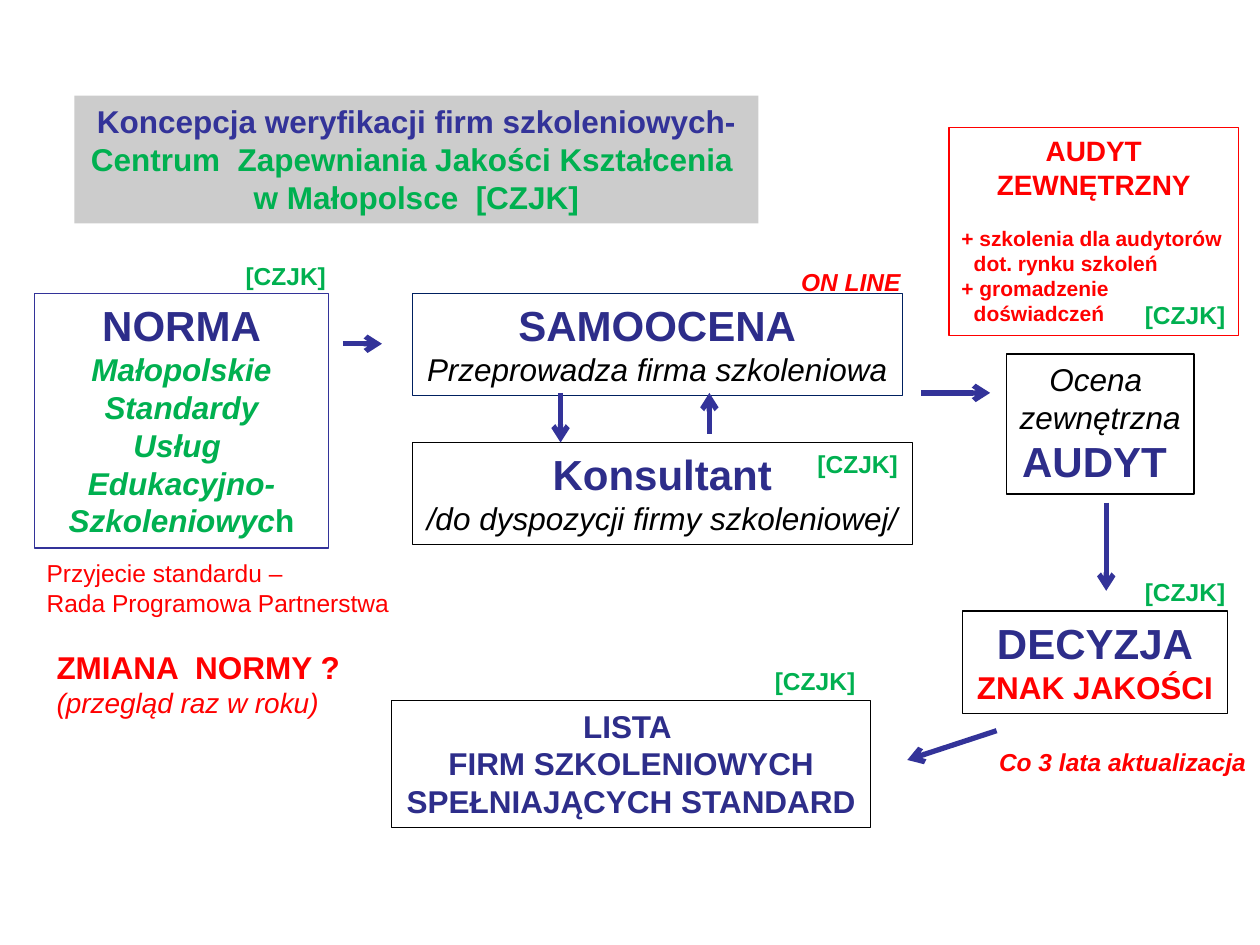
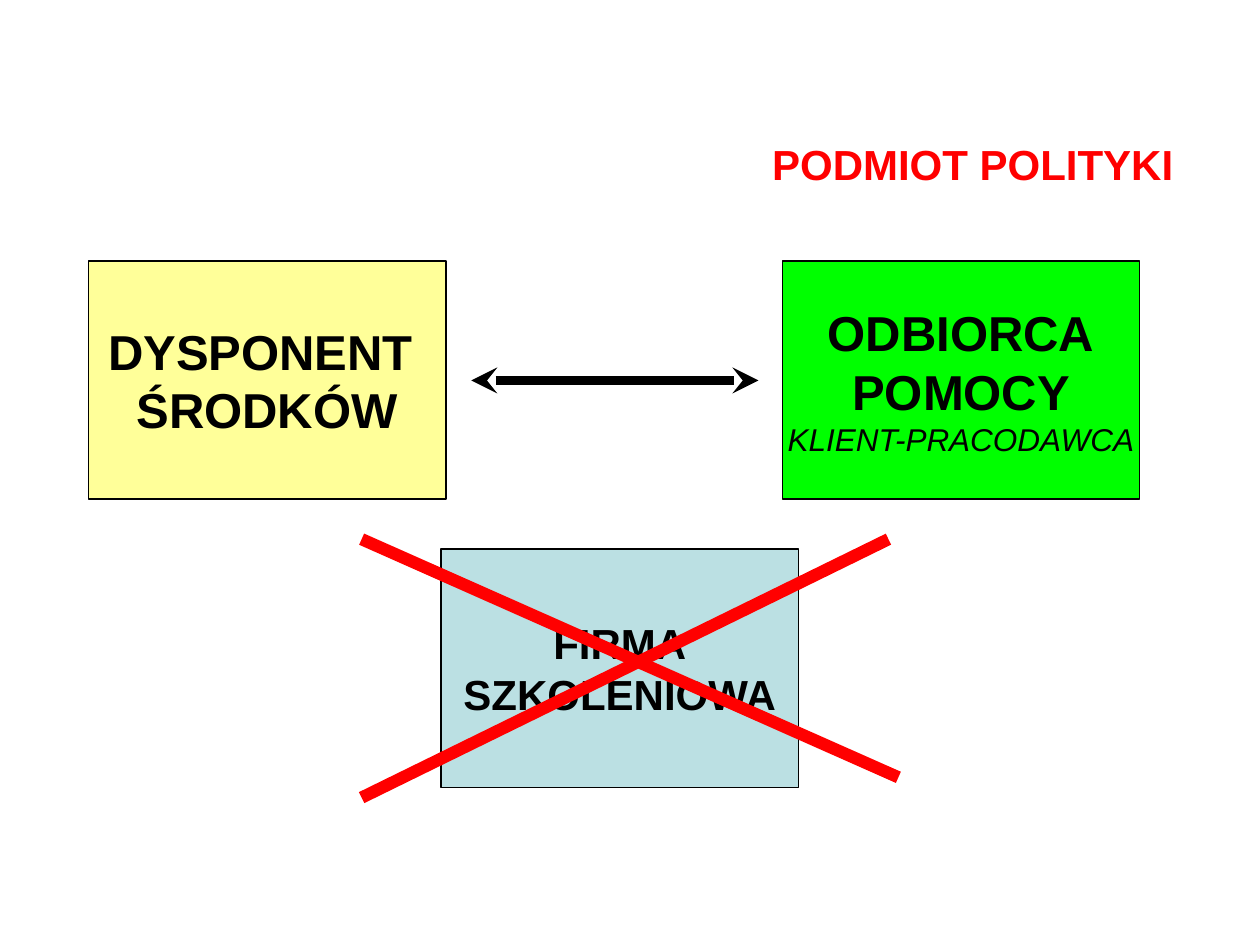
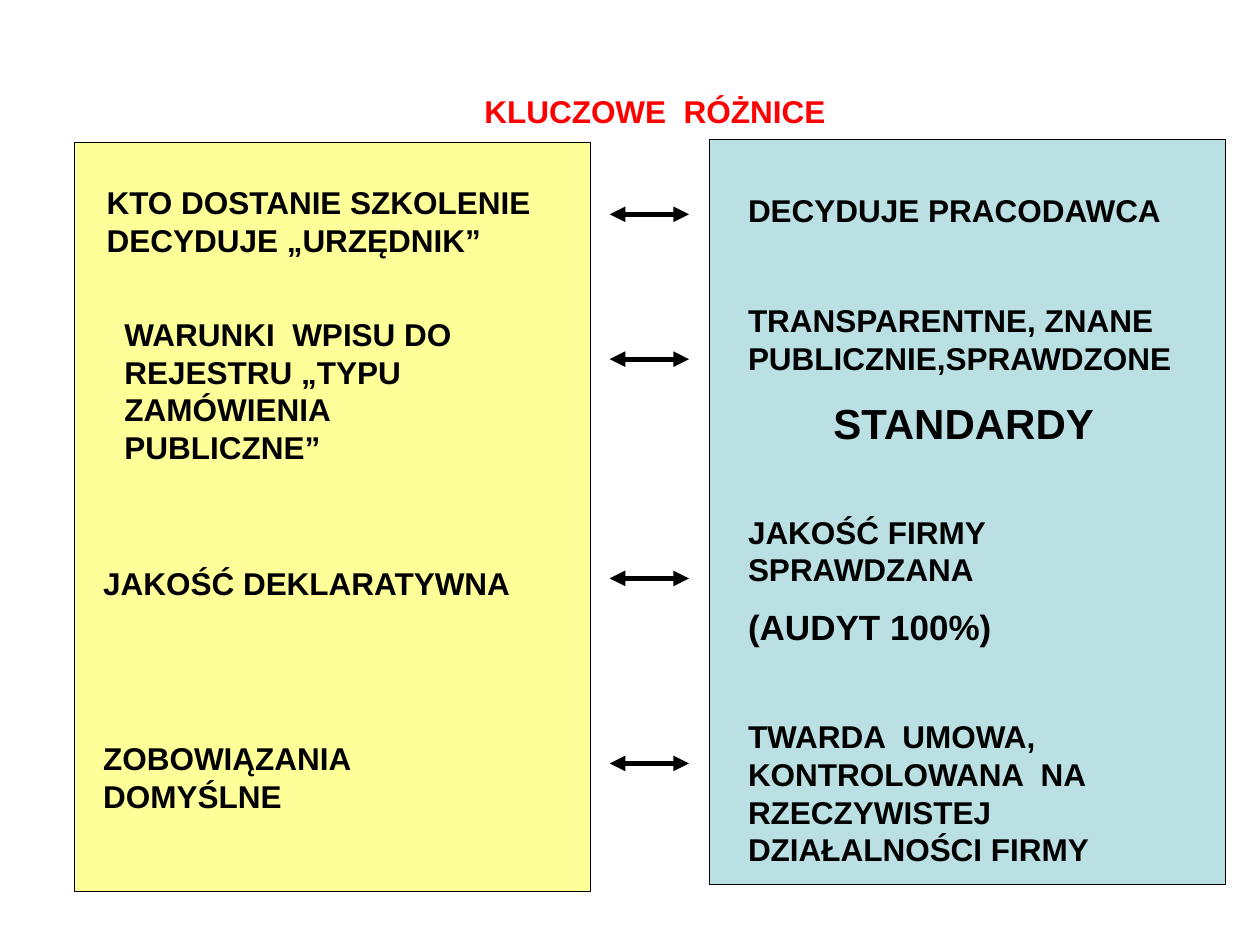
import dataclasses

import lxml.etree
import pptx
import pptx.dml.color
import pptx.enum.shapes
import pptx.enum.text
import pptx.oxml.ns
import pptx.util

Cm = pptx.util.Cm
Pt = pptx.util.Pt
RGBColor = pptx.dml.color.RGBColor
CENTER = pptx.enum.text.PP_ALIGN.CENTER
LEFT = pptx.enum.text.PP_ALIGN.LEFT
TOP = pptx.enum.text.MSO_ANCHOR.TOP
MIDDLE = pptx.enum.text.MSO_ANCHOR.MIDDLE

BLACK = RGBColor(0x00, 0x00, 0x00)
RED = RGBColor(0xFF, 0x00, 0x00)
GREEN = RGBColor(0x00, 0xB0, 0x50)
LIME = RGBColor(0x00, 0xFF, 0x00)
INDIGO = RGBColor(0x33, 0x33, 0x99)
NAVY = RGBColor(0x2D, 0x2D, 0x8A)
DARK_BLUE = RGBColor(0x00, 0x20, 0x60)
GRAY = RGBColor(0xCC, 0xCC, 0xCC)
YELLOW = RGBColor(0xFF, 0xFF, 0x99)
PALE_BLUE = RGBColor(0xBB, 0xE0, 0xE3)


@dataclasses.dataclass(frozen=True)
class TextStyle:
    size: int
    color: RGBColor = BLACK
    bold: bool = True
    italic: bool = False


HEADING = TextStyle(24, NAVY)
LIST_HEADING = TextStyle(18, NAVY)
DESCRIPTION = TextStyle(18, bold=False, italic=True)
STANDARD = TextStyle(18, GREEN, italic=True)
CENTRE = TextStyle(18, GREEN)
TAG = TextStyle(14, GREEN)
REMARK = TextStyle(14, RED, italic=True)
NOTE = TextStyle(14, RED, bold=False)
ALERT = TextStyle(18, RED)
AUDIT_ITEM = TextStyle(12, RED)
PARTY = TextStyle(28)
FIRM = TextStyle(24)
ARGUMENT = TextStyle(18)


class Deck:
    font_name = "Arial"

    def __init__(self):
        self.presentation = pptx.Presentation()
        self.presentation.slide_width = Cm(25.4)
        self.presentation.slide_height = Cm(19.05)
        self.slide = None

    def add_slide(self, title_area, lines, fill=None):
        self.slide = self.presentation.slides.add_slide(self.presentation.slide_layouts[5])
        title = self.slide.shapes.title
        title.left, title.top, title.width, title.height = map(Cm, title_area)
        if fill is not None:
            title.fill.solid()
            title.fill.fore_color.rgb = fill
        self.set_lines(title, lines, CENTER)

    def format_run(self, run, style):
        run.font.name = self.font_name
        run.font.size = Pt(style.size)
        run.font.bold = style.bold
        run.font.italic = style.italic
        run.font.color.rgb = style.color

    def set_lines(self, shape, lines, alignment, wrap=True, anchor=TOP):
        text_frame = shape.text_frame
        text_frame.text = "\n".join(text for text, style in lines)
        text_frame.word_wrap = wrap
        text_frame.vertical_anchor = anchor
        text_frame.auto_size = (
            pptx.enum.text.MSO_AUTO_SIZE.SHAPE_TO_FIT_TEXT
            if anchor == TOP
            else pptx.enum.text.MSO_AUTO_SIZE.NONE
        )
        for paragraph, (text, style) in zip(text_frame.paragraphs, lines):
            paragraph.alignment = alignment
            for run in paragraph.runs:
                self.format_run(run, style)

    def box(self, area, lines=(), fill=None, line=BLACK, wrap=True, anchor=TOP):
        shape = self.slide.shapes.add_shape(
            pptx.enum.shapes.MSO_SHAPE.RECTANGLE, *map(Cm, area)
        )
        shape.shadow.inherit = False
        if fill is None:
            shape.fill.background()
        else:
            shape.fill.solid()
            shape.fill.fore_color.rgb = fill
        shape.line.color.rgb = line
        shape.line.width = Pt(0.75)
        if lines:
            self.set_lines(shape, lines, CENTER, wrap, anchor)
        return shape

    def label(self, area, lines, wrap=True):
        shape = self.slide.shapes.add_textbox(*map(Cm, area))
        self.set_lines(shape, lines, LEFT, wrap)
        return shape

    def line(self, ends, color, width, head=None, tail=None):
        connector = self.slide.shapes.add_connector(
            pptx.enum.shapes.MSO_CONNECTOR.STRAIGHT, *map(Cm, ends)
        )
        connector.line.color.rgb = color
        connector.line.width = Pt(width)
        properties = connector._element.spPr
        outline = properties.find(pptx.oxml.ns.qn("a:ln"))
        for tag, kind in (("a:headEnd", head), ("a:tailEnd", tail)):
            if kind:
                lxml.etree.SubElement(outline, pptx.oxml.ns.qn(tag), type=kind)
        lxml.etree.SubElement(properties, pptx.oxml.ns.qn("a:effectLst"))


def build_verification(deck):
    deck.add_slide(
        (1.5, 1.93, 13.79, 2.57),
        [
            ("Koncepcja weryfikacji firm szkoleniowych-", TextStyle(18, INDIGO)),
            ("Centrum  Zapewniania Jakości Kształcenia ", CENTRE),
            ("w Małopolsce  [CZJK]", CENTRE),
        ],
        GRAY,
    )
    norm = deck.box(
        (0.69, 5.92, 5.94, 5.13),
        [("NORMA", HEADING)]
        + [
            (text, STANDARD)
            for text in ("Małopolskie", "Standardy", "Usług ", "Edukacyjno-", "Szkoleniowyc")
        ],
        line=INDIGO,
    )
    last_letter = norm.text_frame.paragraphs[-1].add_run()
    last_letter.text = "h"
    deck.format_run(last_letter, CENTRE)

    deck.box(
        (8.31, 5.92, 9.88, 2.06),
        [("SAMOOCENA", HEADING), ("Przeprowadza firma szkoleniowa", DESCRIPTION)],
        line=DARK_BLUE,
        wrap=False,
    )
    deck.box(
        (8.31, 8.92, 10.08, 2.06),
        [("Konsultant", HEADING), ("/do dyspozycji firmy szkoleniowej/", DESCRIPTION)],
        wrap=False,
    )
    deck.box(
        (20.29, 7.14, 3.78, 2.82),
        [("Ocena ", DESCRIPTION), ("zewnętrzna", DESCRIPTION), ("AUDYT ", HEADING)],
    )
    deck.box(
        (19.41, 12.32, 5.33, 2.06),
        [("DECYZJA", HEADING), ("ZNAK JAKOŚCI", ALERT)],
        wrap=False,
    )
    deck.box(
        (7.9, 14.12, 9.65, 2.57),
        [
            (text, LIST_HEADING)
            for text in ("LISTA ", "FIRM SZKOLENIOWYCH", "SPEŁNIAJĄCYCH STANDARD")
        ],
        wrap=False,
    )
    audit = deck.box(
        (19.13, 2.57, 5.84, 4.19),
        [
            ("AUDYT ZEWNĘTRZNY", TextStyle(16, RED)),
            ("+ szkolenia dla audytorów dot. rynku szkoleń", AUDIT_ITEM),
            ("+ gromadzenie doświadczeń", AUDIT_ITEM),
        ],
        line=RED,
    )
    audit_items = audit.text_frame.paragraphs[1:]
    audit_items[0].space_before = Pt(14)
    for paragraph in audit_items:
        paragraph.alignment = LEFT
        properties = paragraph._p.get_or_add_pPr()
        properties.set("marL", str(Cm(0.25)))
        properties.set("indent", str(-Cm(0.25)))

    for ends in (
        (6.91, 6.93, 7.7, 6.93),
        (14.3, 8.74, 14.3, 7.92),
        (11.3, 7.92, 11.3, 8.92),
        (18.57, 7.92, 19.96, 7.92),
        (22.3, 10.13, 22.3, 11.91),
        (20.09, 14.73, 18.29, 15.32),
    ):
        deck.line(ends, INDIGO, 3, tail="arrow")

    deck.label(
        (0.89, 12.93, 6.27, 1.7),
        [
            ("ZMIANA  NORMY ?", ALERT),
            ("(przegląd raz w roku)", TextStyle(16, RED, bold=False, italic=True)),
        ],
    )
    deck.label(
        (0.69, 11.13, 7.44, 1.45),
        [("Przyjecie standardu –", NOTE), ("Rada Programowa Partnerstwa", NOTE)],
        wrap=False,
    )
    deck.label((15.9, 5.26, 2.54, 0.86), [("ON LINE", REMARK)], wrap=False)
    deck.label((19.89, 14.94, 5.51, 0.86), [("Co 3 lata aktualizacja", REMARK)], wrap=False)
    for left, top in (
        (15.37, 13.31), (4.7, 5.13), (22.83, 11.51), (22.83, 5.92), (16.23, 8.92)
    ):
        deck.label((left, top, 2.13, 0.86), [("[CZJK]", TAG)], wrap=False)


def build_policy_subject(deck):
    deck.add_slide(
        (14.91, 2.67, 9.4, 1.27), [("PODMIOT POLITYKI", TextStyle(24, RED))]
    )
    for left, top, fill, lines in (
        (1.78, 5.26, YELLOW, [("DYSPONENT ", PARTY), ("ŚRODKÓW", PARTY)]),
        (
            15.77, 5.26, LIME,
            [("ODBIORCA", PARTY), ("POMOCY", PARTY), ("KLIENT-PRACODAWCA", DESCRIPTION)],
        ),
        (8.89, 11.07, PALE_BLUE, [("FIRMA", FIRM), ("SZKOLENIOWA", FIRM)]),
    ):
        deck.box((left, top, 7.21, 4.8), lines, fill, wrap=False, anchor=MIDDLE)
    deck.line((9.5, 7.67, 15.29, 7.67), BLACK, 5, "stealth", "stealth")
    for cross_stroke in ((7.29, 10.87, 18.11, 15.67), (7.29, 16.08, 17.91, 10.87)):
        deck.line(cross_stroke, RED, 7)


def build_key_differences(deck):
    deck.add_slide((6.5, 1.73, 13.41, 1.02), [("KLUCZOWE  RÓŻNICE", ALERT)])
    deck.box((1.5, 2.87, 10.41, 15.11), fill=YELLOW)
    deck.box((14.3, 2.82, 10.41, 15.01), fill=PALE_BLUE)
    for area, text in (
        ((1.9, 3.56, 9.19, 1.78), "KTO DOSTANIE SZKOLENIE DECYDUJE „URZĘDNIK”"),
        ((2.26, 6.22, 8.81, 3.3), "WARUNKI  WPISU DO REJESTRU „TYPU  ZAMÓWIENIA  PUBLICZNE”"),
        ((1.83, 11.25, 8.81, 1.02), "JAKOŚĆ DEKLARATYWNA"),
        ((1.83, 14.78, 8.81, 1.78), "ZOBOWIĄZANIA  DOMYŚLNE"),
        ((14.83, 3.73, 9.19, 1.02), "DECYDUJE PRACODAWCA"),
        (
            (14.83, 14.33, 9.19, 3.3),
            "TWARDA  UMOWA,  KONTROLOWANA  NA RZECZYWISTEJ DZIAŁALNOŚCI FIRMY",
        ),
    ):
        deck.label(area, [(text, ARGUMENT)])

    standards = deck.label(
        (14.83, 5.94, 9.19, 3.3),
        [
            ("TRANSPARENTNE, ZNANE PUBLICZNIE,SPRAWDZONE", ARGUMENT),
            ("STANDARDY", TextStyle(24)),
        ],
    )
    standards.text_frame.paragraphs[1].alignment = CENTER
    standards.text_frame.paragraphs[1].space_before = Pt(12)
    quality = deck.label(
        (14.83, 10.21, 9.65, 3.05),
        [("JAKOŚĆ FIRMY SPRAWDZANA", ARGUMENT), ("(AUDYT 100%)", TextStyle(20))],
    )
    quality.text_frame.paragraphs[1].space_before = Pt(10)

    for height in (4.32, 7.24, 11.66, 15.39):
        deck.line((12.29, height, 13.89, height), BLACK, 3, "triangle", "triangle")


def main():
    deck = Deck()
    build_verification(deck)
    build_policy_subject(deck)
    build_key_differences(deck)
    deck.presentation.save("out.pptx")


if __name__ == "__main__":
    main()
